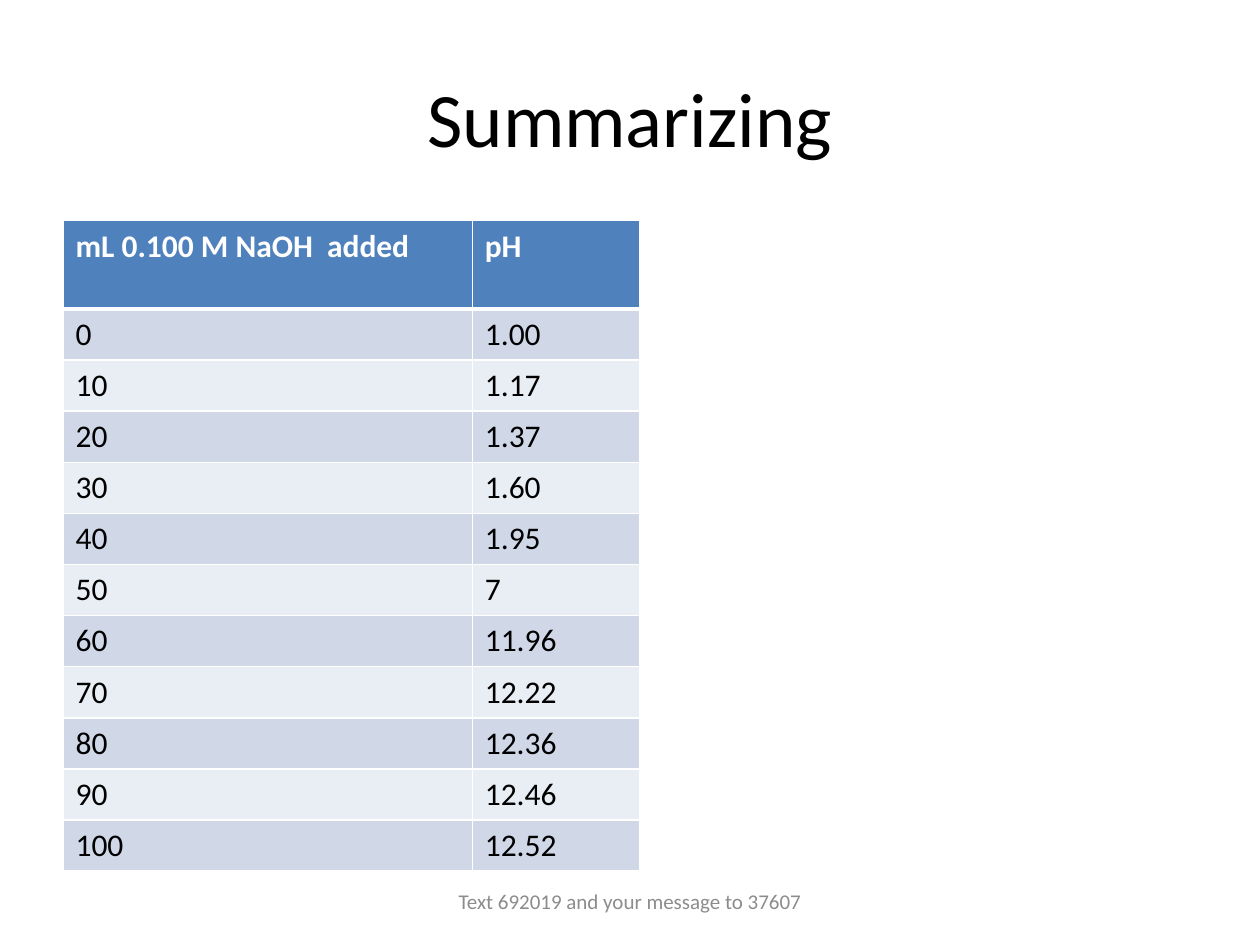
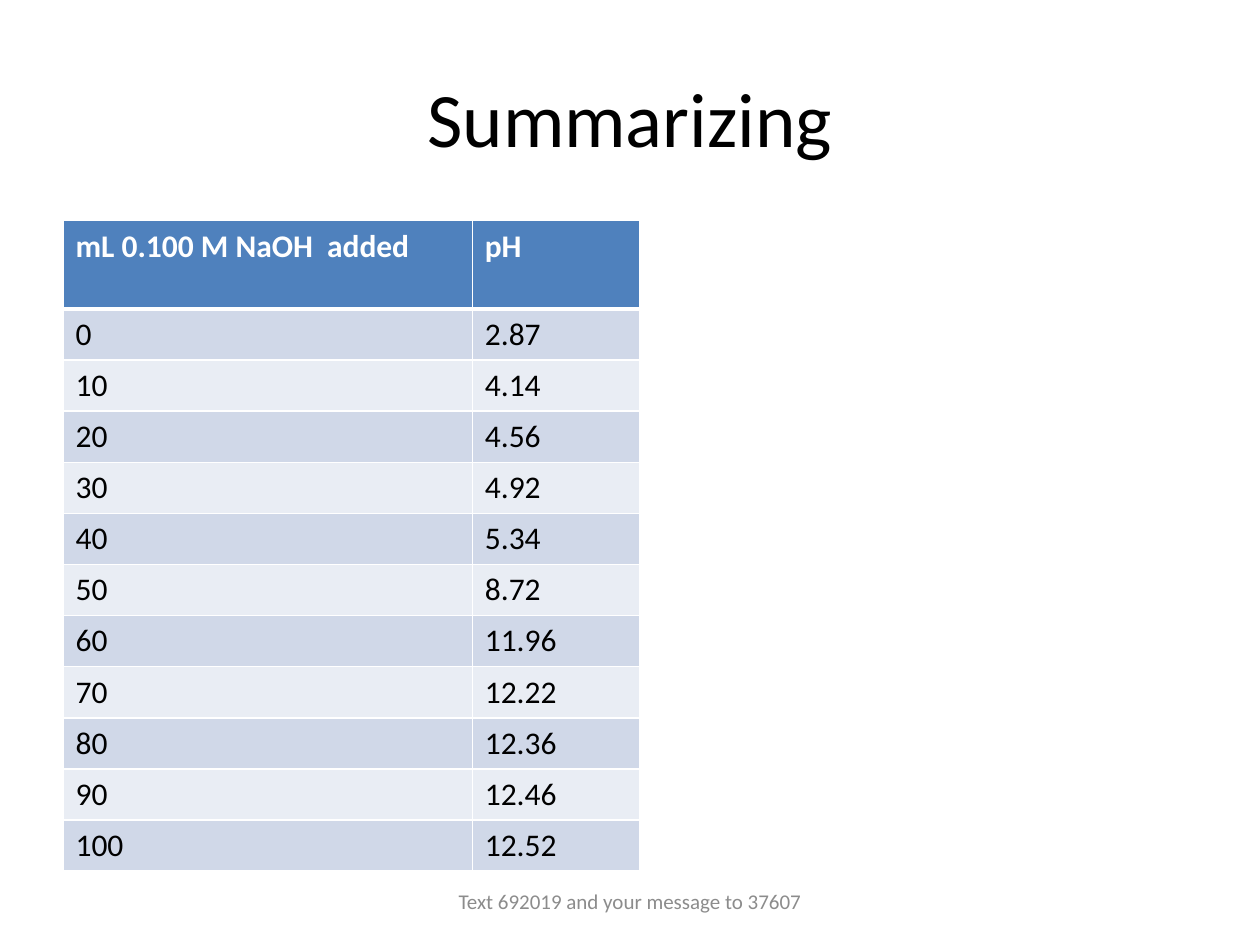
from dataclasses import dataclass

from lxml import etree
from pptx import Presentation
from pptx.dml.color import RGBColor
from pptx.enum.text import MSO_ANCHOR, PP_ALIGN
from pptx.oxml.ns import qn
from pptx.slide import Slide
from pptx.table import _Cell
from pptx.text.text import TextFrame
from pptx.util import Cm, Pt

CENTER = PP_ALIGN.CENTER
LEFT = PP_ALIGN.LEFT
MIDDLE = MSO_ANCHOR.MIDDLE
TITLE_ONLY = 5

FONT = "Calibri"
BLACK = "000000"
WHITE = "FFFFFF"
GRAY = "8C8C8C"
HEADER_BLUE = "4F81BD"
BANDS = ("D0D8E8", "E9EDF4")

TITLE = "Summarizing"
FOOTER = "Text 692019 and your message to 37607"
HEADINGS = ("mL 0.100 M NaOH  added", "pH")
VOLUME_STEP = 10
COLUMN_WIDTHS = (Cm(8.25), Cm(3.38))
HEADER_HEIGHT = Cm(1.78)
ROW_HEIGHT = Cm(1.03)
THIN_BORDER = Pt(1)
THICK_BORDER = Pt(3)


@dataclass(frozen=True)
class Box:
    left: int
    top: int
    width: int
    height: int


@dataclass(frozen=True)
class TextStyle:
    size: int
    color: str
    bold: bool = False
    alignment: PP_ALIGN = LEFT


@dataclass(frozen=True)
class Titration:
    ph_values: tuple[str, ...]


TITLE_BOX = Box(Cm(1.27), Cm(0.76), Cm(22.86), Cm(3.18))
FOOTER_BOX = Box(Cm(8.68), Cm(17.65), Cm(8.04), Cm(1.02))
TABLE_LEFT, TABLE_TOP = Cm(1.27), Cm(4.45)

TITLE_STYLE = TextStyle(44, BLACK, alignment=CENTER)
FOOTER_STYLE = TextStyle(12, GRAY, alignment=CENTER)
HEADING_STYLE = TextStyle(18, WHITE, bold=True)
VALUE_STYLE = TextStyle(18, BLACK)

EXCESS_BASE = ("11.96", "12.22", "12.36", "12.46", "12.52")
TITRATIONS = (
    Titration(("1.00", "1.17", "1.37", "1.60", "1.95", "7") + EXCESS_BASE),
    Titration(("2.87", "4.14", "4.56", "4.92", "5.34", "8.72") + EXCESS_BASE),
)


def rgb(color: str) -> RGBColor:
    return RGBColor.from_string(color)


def write_text(text_frame: TextFrame, text: str, style: TextStyle) -> None:
    text_frame.text = text
    paragraph = text_frame.paragraphs[0]
    paragraph.alignment = style.alignment
    font = paragraph.runs[0].font
    font.name = FONT
    font.size = Pt(style.size)
    font.bold = style.bold
    font.color.rgb = rgb(style.color)


def add_borders(cell: _Cell, top: int, bottom: int) -> None:
    properties = cell._tc.get_or_add_tcPr()
    widths = {"a:lnL": THIN_BORDER, "a:lnR": THIN_BORDER, "a:lnT": top, "a:lnB": bottom}
    for tag, width in widths.items():
        line = etree.SubElement(properties, qn(tag), w=str(int(width)))
        fill = etree.SubElement(line, qn("a:solidFill"))
        etree.SubElement(fill, qn("a:srgbClr"), val=WHITE)


def add_title(slide: Slide) -> None:
    title = slide.shapes.title
    title.left, title.top = TITLE_BOX.left, TITLE_BOX.top
    title.width, title.height = TITLE_BOX.width, TITLE_BOX.height
    title.text_frame.vertical_anchor = MIDDLE
    write_text(title.text_frame, TITLE, TITLE_STYLE)


def add_footer(slide: Slide) -> None:
    footer = slide.shapes.add_textbox(
        FOOTER_BOX.left, FOOTER_BOX.top, FOOTER_BOX.width, FOOTER_BOX.height
    )
    footer.text_frame.word_wrap = True
    footer.text_frame.vertical_anchor = MIDDLE
    write_text(footer.text_frame, FOOTER, FOOTER_STYLE)


def add_titration_table(slide: Slide, titration: Titration) -> None:
    rows = [HEADINGS]
    rows += [(str(index * VOLUME_STEP), ph) for index, ph in enumerate(titration.ph_values)]
    table = slide.shapes.add_table(
        len(rows),
        len(HEADINGS),
        TABLE_LEFT,
        TABLE_TOP,
        sum(COLUMN_WIDTHS),
        HEADER_HEIGHT + ROW_HEIGHT * len(titration.ph_values),
    ).table
    for column, width in zip(table.columns, COLUMN_WIDTHS):
        column.width = width
    for row_index, texts in enumerate(rows):
        is_header = row_index == 0
        table.rows[row_index].height = HEADER_HEIGHT if is_header else ROW_HEIGHT
        style = HEADING_STYLE if is_header else VALUE_STYLE
        color = HEADER_BLUE if is_header else BANDS[(row_index - 1) % len(BANDS)]
        top = THICK_BORDER if row_index == 1 else THIN_BORDER
        bottom = THICK_BORDER if is_header else THIN_BORDER
        for column_index, text in enumerate(texts):
            cell = table.cell(row_index, column_index)
            write_text(cell.text_frame, text, style)
            add_borders(cell, top, bottom)
            cell.fill.solid()
            cell.fill.fore_color.rgb = rgb(color)


def main() -> None:
    presentation = Presentation()
    presentation.slide_width = Cm(25.4)
    presentation.slide_height = Cm(19.05)
    for titration in TITRATIONS:
        slide = presentation.slides.add_slide(presentation.slide_layouts[TITLE_ONLY])
        add_title(slide)
        add_titration_table(slide, titration)
        add_footer(slide)
    presentation.save("out.pptx")


if __name__ == "__main__":
    main()
